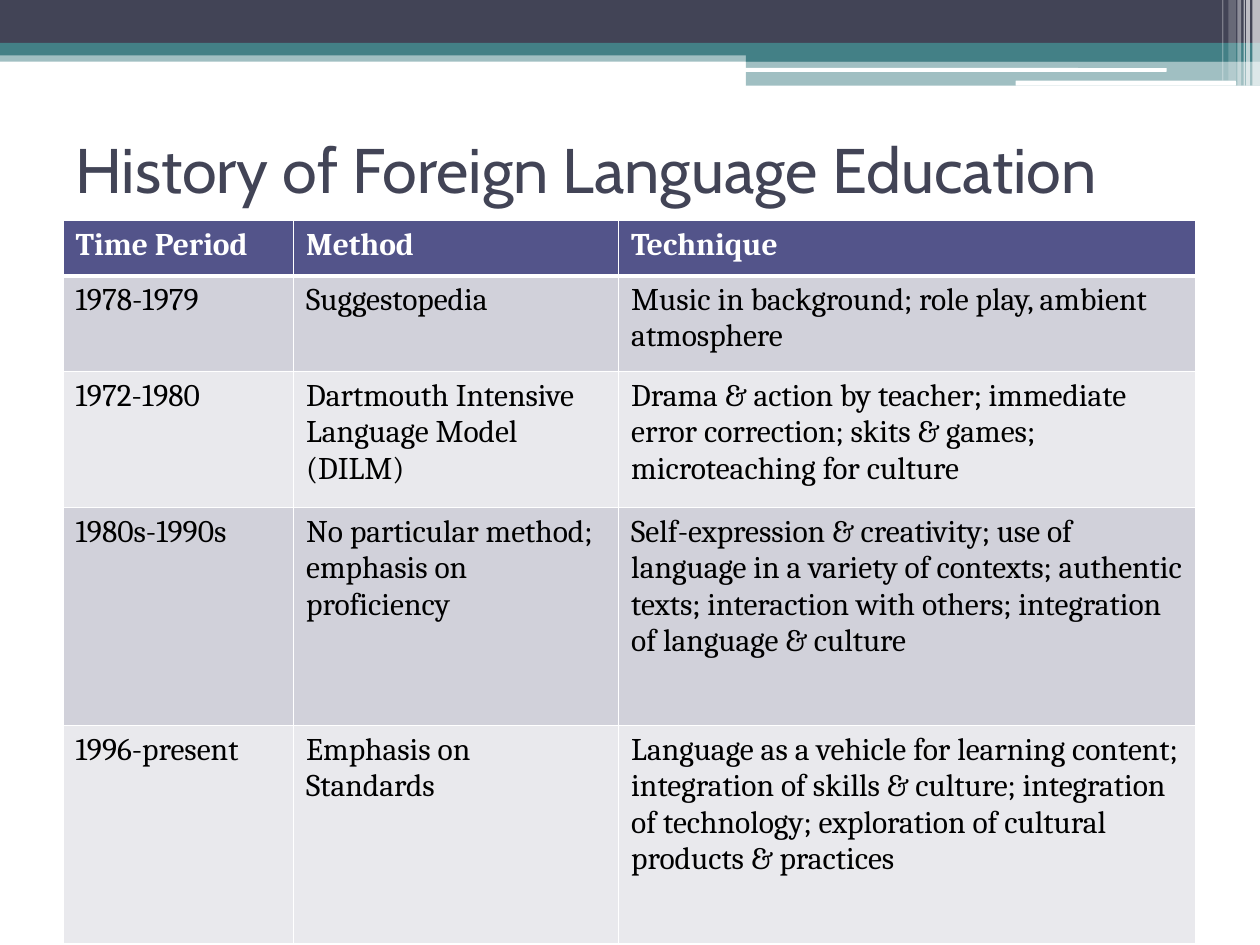
from dataclasses import dataclass

from lxml.etree import SubElement
from pptx import Presentation
from pptx.dml.color import RGBColor
from pptx.enum.shapes import MSO_SHAPE as Shape
from pptx.enum.text import MSO_ANCHOR as Anchor
from pptx.oxml.ns import qn
from pptx.util import Inches, Pt


@dataclass(frozen=True)
class Theme:
    navy: str = "424456"
    teal: str = "438086"
    white: str = "FFFFFF"
    black: str = "000000"
    header: str = "53548A"
    bands: tuple = ("D1D1DA", "E9E9ED")
    heading_font: str = "Cabin"
    body_font: str = "Cambria"
    title_size: int = 36
    table_size: int = 18
    rule: int = 1
    header_rule: int = 3


THEME = Theme()

# Content
TITLE = "History of Foreign Language Education"
HISTORY = [
    ("Time Period", "Method", "Technique"),
    ("1978-1979", "Suggestopedia",
     "Music in background; role play, ambient atmosphere"),
    ("1972-1980", "Dartmouth Intensive Language Model (DILM)",
     "Drama & action by teacher; immediate error correction; skits & games; "
     "microteaching for culture"),
    ("1980s-1990s", "No particular method; emphasis on proficiency",
     "Self-expression & creativity; use of language in a variety of contexts; "
     "authentic texts; interaction with others; integration of language & culture"),
    ("1996-present", "Emphasis on Standards",
     "Language as a vehicle for learning content; integration of skills & culture; "
     "integration of technology; exploration of cultural products & practices"),
]
COLUMN_WIDTHS = (1.83, 2.58, 4.58)
ROW_HEIGHTS = (0.44, 0.76, 1.08, 1.73, 1.73)

# Header bands: left, top, width, height, colour, opacity in percent
BANDS = [
    (0, 0.4, 10, 0.09, THEME.teal, 50),
    (0, 0, 10, 0.34, THEME.navy, 100),
    (0, 0.34, 10, 0.1, THEME.teal, 100),
    (5.92, 0.39, 4.08, 0.1, THEME.teal, 100),
    (5.92, 0.48, 4.08, 0.2, THEME.teal, 50),
]
# White rounded bars: left, top, width, height
BARS = [(5.91, 0.54, 3.35, 0.03), (8.06, 0.64, 1.75, 0.04)]
# Pale stripes in the corner: left, width, height, opacity in percent
STRIPES = [
    (9.94, 0.06, 0.68, 65),
    (9.89, 0.03, 0.68, 65),
    (9.87, 0.01, 0.68, 60),
    (9.82, 0.03, 0.68, 40),
    (9.75, 0.06, 0.64, 20),
    (9.7, 0.01, 0.64, 30),
]


def write(frame, text, *, font, size, color, bold=False):
    run = frame.paragraphs[0].add_run()
    run.text = text
    run.font.name = font
    run.font.size = Pt(size)
    run.font.bold = bold
    run.font.color.rgb = RGBColor.from_string(color)


def paint(fill, color):
    fill.solid()
    fill.fore_color.rgb = RGBColor.from_string(color)


def add_block(slide, box, color, opacity=100, kind=Shape.RECTANGLE):
    block = slide.shapes.add_shape(kind, *map(Inches, box))
    block.shadow.inherit = False
    block.line.fill.background()
    paint(block.fill, color)
    if opacity < 100:
        tint = block.fill._xPr.find(qn("a:solidFill"))[0]
        SubElement(tint, qn("a:alpha"), val=str(opacity * 1000))


def add_borders(cell, top, bottom):
    """Draw white rules; they must precede the cell's fill in the XML."""
    properties = cell._tc.get_or_add_tcPr()
    edges = (("lnL", THEME.rule), ("lnR", THEME.rule), ("lnT", top), ("lnB", bottom))
    for position, (edge, width) in enumerate(edges):
        line = SubElement(properties, qn(f"a:{edge}"), w=str(Pt(width)))
        SubElement(SubElement(line, qn("a:solidFill")), qn("a:srgbClr"), val=THEME.white)
        properties.insert(position, line)


def add_decoration(slide):
    for *box, color, opacity in BANDS:
        add_block(slide, box, color, opacity)
    for bar in BARS:
        add_block(slide, bar, THEME.white, kind=Shape.ROUNDED_RECTANGLE)
    for left, width, height, opacity in STRIPES:
        add_block(slide, (left, 0, width, height), THEME.white, opacity)


def add_title(slide):
    title = slide.shapes.add_textbox(*map(Inches, (0.5, 0.92, 9, 0.83))).text_frame
    title.word_wrap = True
    title.vertical_anchor = Anchor.MIDDLE
    write(title, TITLE, font=THEME.heading_font, size=THEME.title_size, color=THEME.navy)


def add_history(slide):
    box = (0.5, 1.75, sum(COLUMN_WIDTHS), sum(ROW_HEIGHTS))
    history = slide.shapes.add_table(
        len(HISTORY), len(COLUMN_WIDTHS), *map(Inches, box)).table
    for column, width in zip(history.columns, COLUMN_WIDTHS):
        column.width = Inches(width)
    for r, (entry, height) in enumerate(zip(HISTORY, ROW_HEIGHTS)):
        history.rows[r].height = Inches(height)
        is_header = r == 0
        for c, text in enumerate(entry):
            cell = history.cell(r, c)
            paint(cell.fill, THEME.header if is_header else THEME.bands[(r - 1) % 2])
            add_borders(cell,
                        top=THEME.header_rule if r == 1 else THEME.rule,
                        bottom=THEME.header_rule if is_header else THEME.rule)
            write(cell.text_frame, text, font=THEME.body_font, size=THEME.table_size,
                  color=THEME.white if is_header else THEME.black, bold=is_header)


def main():
    deck = Presentation()
    deck.slide_width, deck.slide_height = Inches(10), Inches(7.5)
    slide = deck.slides.add_slide(deck.slide_layouts[6])
    paint(slide.background.fill, THEME.white)
    add_decoration(slide)
    add_title(slide)
    add_history(slide)
    deck.save("out.pptx")


if __name__ == "__main__":
    main()
